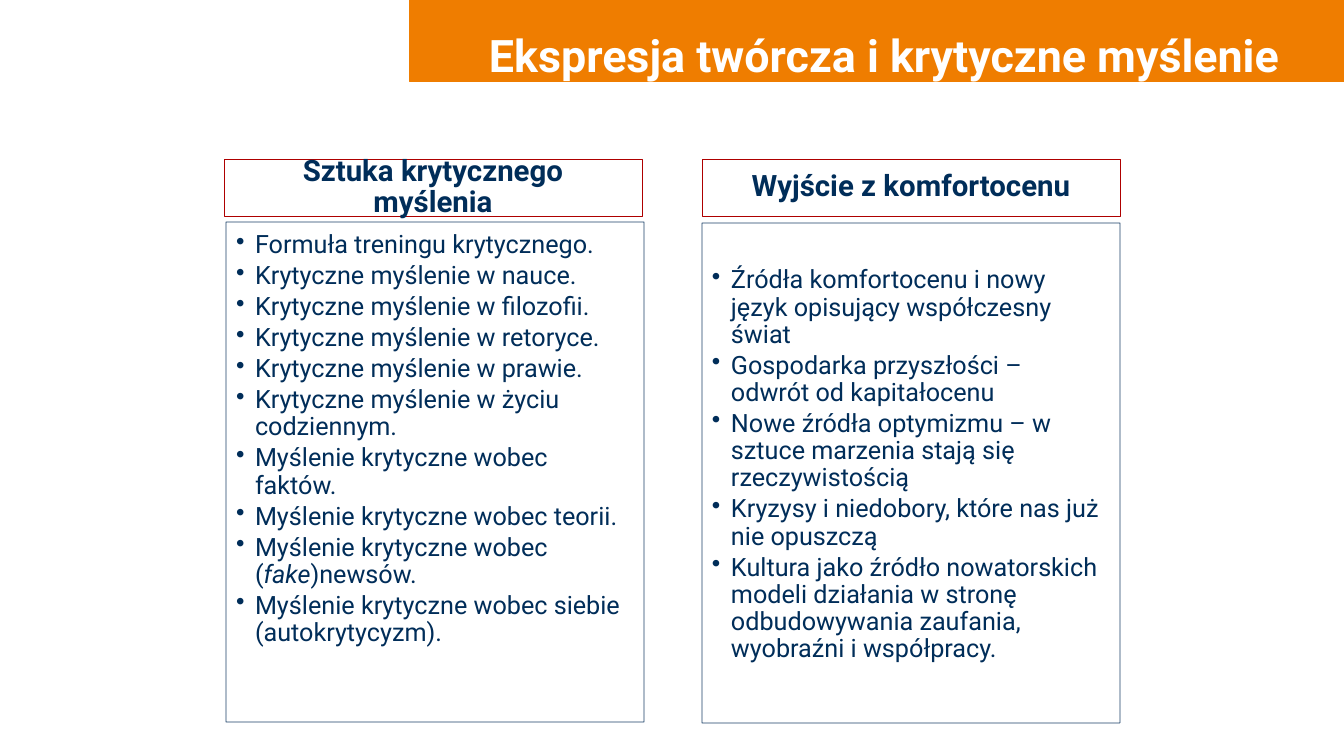
from lxml import etree
from pptx import Presentation
from pptx import util as u
from pptx.dml.color import RGBColor
from pptx.enum import shapes, text
from pptx.oxml import ns

TITLE = "Ekspresja twórcza i krytyczne myślenie"
COLUMNS = [
    {
        "heading": "Sztuka krytycznego myślenia",
        "heading_at": (224, 159),
        "body_at": (226, 222),
        "body_top_inset": 10,
        "items": [
            "Formuła treningu krytycznego.",
            "Krytyczne myślenie w nauce.",
            "Krytyczne myślenie w filozofii.",
            "Krytyczne myślenie w retoryce.",
            "Krytyczne myślenie w prawie.",
            "Krytyczne myślenie w życiu codziennym.",
            "Myślenie krytyczne wobec faktów.",
            "Myślenie krytyczne wobec teorii.",
            "Myślenie krytyczne wobec (*fake*)newsów.",
            "Myślenie krytyczne wobec siebie (autokrytycyzm).",
        ],
    },
    {
        "heading": "Wyjście z komfortocenu",
        "heading_at": (702, 159),
        "body_at": (702, 223),
        "body_top_inset": 44,
        "items": [
            "Źródła komfortocenu i nowy język opisujący współczesny świat",
            "Gospodarka przyszłości – odwrót od kapitałocenu",
            "Nowe źródła optymizmu – w sztuce marzenia stają się rzeczywistością",
            "Kryzysy i niedobory, które nas już nie opuszczą",
            "Kultura jako źródło nowatorskich modeli działania w stronę "
            "odbudowywania zaufania, wyobraźni i współpracy.",
        ],
    },
]

THEME = {
    "font": "Roboto",
    "orange": "EF7D00",
    "red": "AE0000",
    "navy": "002D59",
    "white": "FFFFFF",
    "title_size": 32,
    "heading_size": 21,
    "body_size": 18,
}
SLIDE_SIZE = (1344, 756)
TITLE_BOX = (410, 0, 934, 82)
HEADING_SIZE = (418, 57)
BODY_SIZE = (418, 500)
BULLET_INDENT = 19
TITLE_INDENT = 15
EMU_PER_PX = 914400 / 100.8


def px(value):
    return u.Emu(round(value * EMU_PER_PX))


def set_values(target, values):
    for name, value in values.items():
        setattr(target, name, value)


def set_alpha(fill, percent):
    for color in fill.iter(ns.qn("a:srgbClr")):
        etree.SubElement(color, ns.qn("a:alpha"), val=str(percent * 1000))


def add_box(slide, box, fill, line, line_width, insets, anchor):
    shape = slide.shapes.add_shape(shapes.MSO_SHAPE.RECTANGLE, *map(px, box))
    shape.shadow.inherit = False
    shape.fill.solid()
    shape.fill.fore_color.rgb = RGBColor.from_string(THEME[fill])
    shape.line.color.rgb = RGBColor.from_string(THEME[line])
    shape.line.width = u.Pt(line_width)
    sides = ("margin_left", "margin_top", "margin_right", "margin_bottom")
    frame_format = dict(zip(sides, map(px, insets)))
    frame_format.update(word_wrap=True, vertical_anchor=anchor)
    set_values(shape.text_frame, frame_format)
    return shape


def write(paragraph, content, size, color, bold, paragraph_format):
    set_values(paragraph, paragraph_format)
    for index, part in enumerate(content.split("*")):
        run = paragraph.add_run()
        run.text = part
        font_format = {"name": THEME["font"], "size": u.Pt(THEME[size]), "bold": bold}
        if index % 2:
            font_format["italic"] = True
        set_values(run.font, font_format)
        run.font.color.rgb = RGBColor.from_string(THEME[color])


def add_bullet(paragraph):
    properties = paragraph._p.get_or_add_pPr()
    indent = px(BULLET_INDENT)
    properties.set("marL", str(indent))
    properties.set("indent", str(-indent))
    etree.SubElement(properties, ns.qn("a:buChar"), char="•")


def add_title(slide):
    shape = add_box(slide, TITLE_BOX, "orange", "orange", 0.75,
                    (10, 5, 10, 5), text.MSO_ANCHOR.MIDDLE)
    paragraph = shape.text_frame.paragraphs[0]
    paragraph._p.get_or_add_pPr().set("marL", str(px(TITLE_INDENT)))
    write(paragraph, TITLE, "title_size", "white", True,
          {"alignment": text.PP_ALIGN.CENTER, "line_spacing": 1.5})


def add_column(slide, column):
    heading = add_box(slide, column["heading_at"] + HEADING_SIZE, "white", "red", 0.5,
                      (16, 9, 16, 9), text.MSO_ANCHOR.MIDDLE)
    write(heading.text_frame.paragraphs[0], column["heading"], "heading_size", "navy", True,
          {"alignment": text.PP_ALIGN.CENTER, "line_spacing": 0.9})

    body = add_box(slide, column["body_at"] + BODY_SIZE, "white", "navy", 0.5,
                   (10, column["body_top_inset"], 14, 16), text.MSO_ANCHOR.TOP)
    set_alpha(body._element.spPr, 90)
    frame = body.text_frame
    for index, item in enumerate(column["items"]):
        paragraph = frame.add_paragraph() if index else frame.paragraphs[0]
        add_bullet(paragraph)
        write(paragraph, item, "body_size", "navy", False,
              {"alignment": text.PP_ALIGN.LEFT, "line_spacing": 0.9,
               "space_after": u.Pt(2.7)})


def main():
    presentation = Presentation()
    presentation.slide_width, presentation.slide_height = map(px, SLIDE_SIZE)
    slide = presentation.slides.add_slide(presentation.slide_layouts[6])
    add_title(slide)
    for column in COLUMNS:
        add_column(slide, column)
    presentation.save("out.pptx")


if __name__ == "__main__":
    main()
